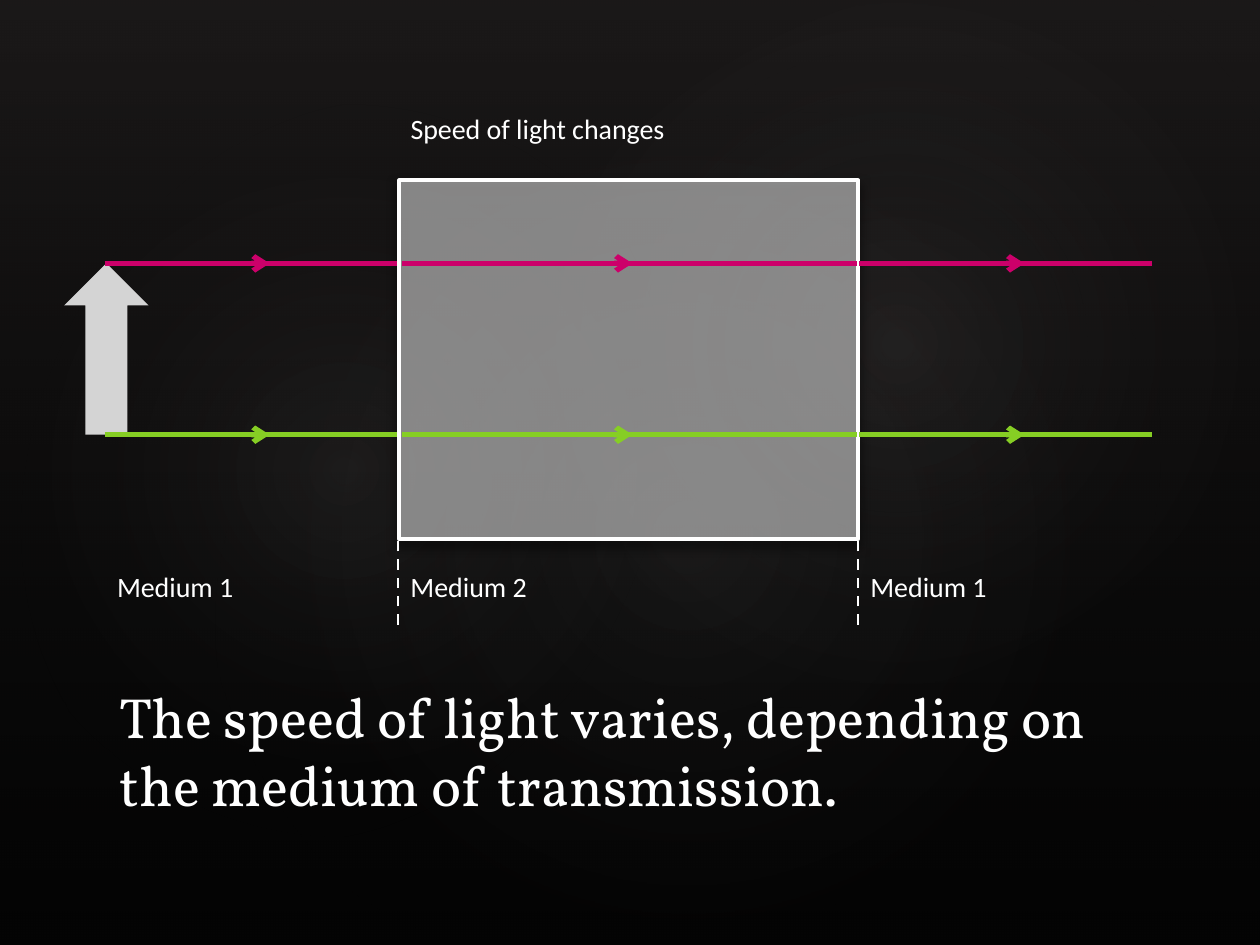
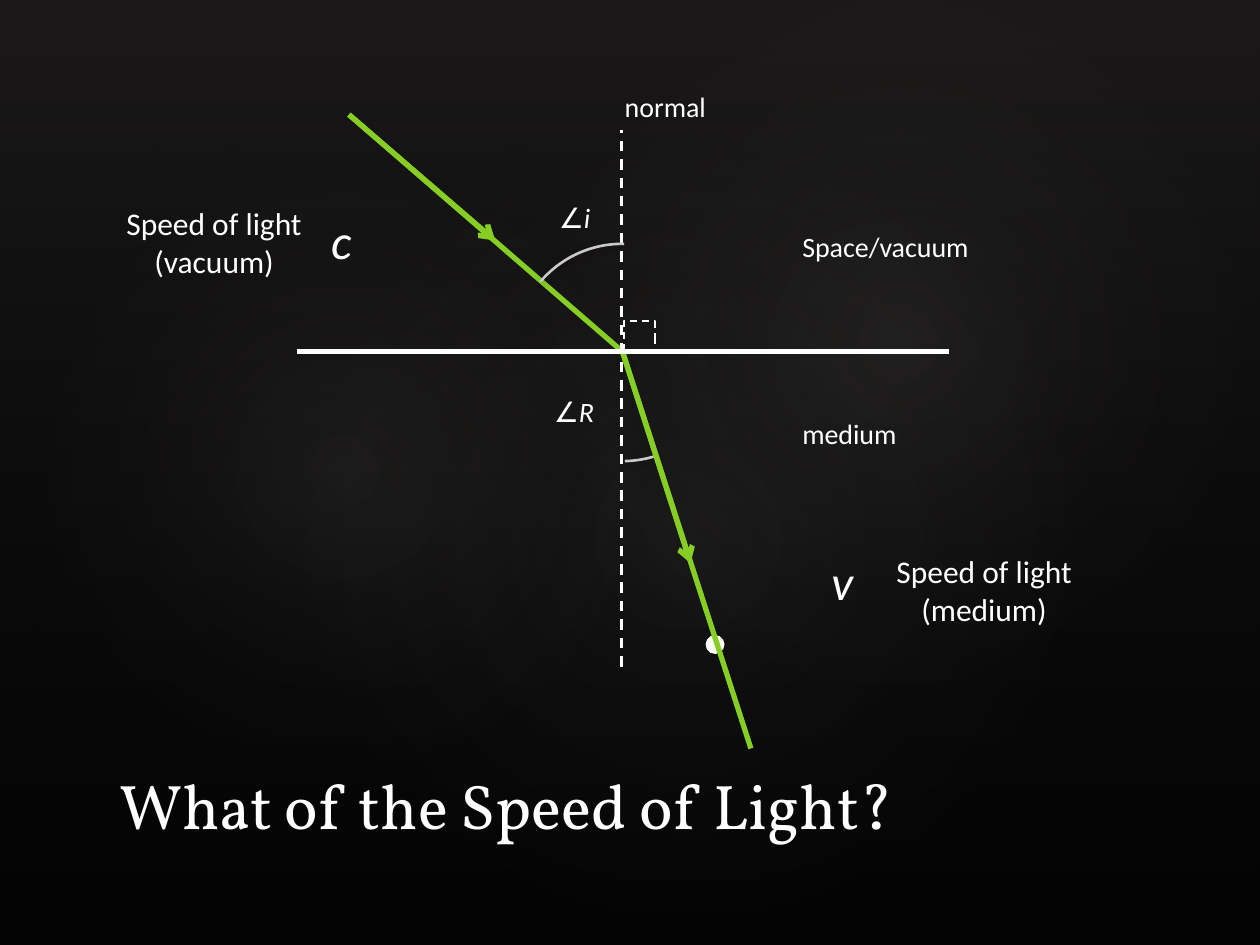
from dataclasses import dataclass

from lxml import etree
from pptx import Presentation
from pptx.dml.color import RGBColor
from pptx.enum.dml import MSO_LINE
from pptx.enum.shapes import MSO_CONNECTOR, MSO_SHAPE
from pptx.enum.text import MSO_ANCHOR, MSO_AUTO_SIZE, PP_ALIGN
from pptx.oxml import parse_xml
from pptx.oxml.ns import qn
from pptx.util import Pt

STRAIGHT = MSO_CONNECTOR.STRAIGHT
RECT, OVAL, ARC, UP_ARROW = (
    MSO_SHAPE.RECTANGLE, MSO_SHAPE.OVAL, MSO_SHAPE.ARC, MSO_SHAPE.UP_ARROW)
DASH = MSO_LINE.DASH
LEFT, CENTER = PP_ALIGN.LEFT, PP_ALIGN.CENTER
BOTTOM = MSO_ANCHOR.BOTTOM
NO_FIT, GROW = MSO_AUTO_SIZE.NONE, MSO_AUTO_SIZE.SHAPE_TO_FIT_TEXT
DRAWING_NS = 'xmlns:a="http://schemas.openxmlformats.org/drawingml/2006/main"'


@dataclass(frozen=True)
class Theme:
    """Colours, fonts and sizes shared by the slides."""
    black: str = "000000"
    white: str = "FFFFFF"
    pink: str = "CC006A"
    green: str = "86CE24"
    object_grey: str = "D4D4D4"
    arc_grey: str = "C9C9C9"
    veil: str = "4B4545"
    glow: str = "BFB9B9"
    dark: str = "282828"
    title_font: str = "Vollkorn"
    body_font: str = "Calibri"
    label: float = 16
    caption: float = 18
    symbol: float = 28
    ray: float = 3
    guide: float = 1.5


THEME = Theme()


@dataclass(frozen=True)
class Box:
    """A region in points that converts its own coordinates to the slide's."""
    left: float
    top: float
    width: float
    height: float

    def point(self, x, y):
        """Return a slide position for a position inside the box."""
        return Pt(self.left + x), Pt(self.top + y)


def apply(target, **formats):
    """Set every given attribute on the target."""
    for attribute, value in formats.items():
        setattr(target, attribute, value)


def stroke(line, color, width, dash=None):
    """Colour a line and set its width and dash."""
    line.color.rgb = RGBColor.from_string(color)
    apply(line, width=Pt(width), dash_style=dash)


def shape(slide, box, kind, x, y, width, height, fill=None, line=None, rotation=0):
    """Add a preset shape with an optional fill and line."""
    part = slide.shapes.add_shape(kind, *box.point(x, y), Pt(width), Pt(height))
    part.shadow.inherit = False
    part.rotation = rotation
    if fill:
        part.fill.solid()
        part.fill.fore_color.rgb = RGBColor.from_string(fill)
    else:
        part.fill.background()
    if line:
        stroke(part.line, *line)
    else:
        part.line.fill.background()
    return part


def drop_shadow(part, alpha, blur, distance):
    """Give a shape a black shadow that falls straight down."""
    effects = part._element.spPr.find(qn("a:effectLst"))
    effects.append(parse_xml(
        f'<a:outerShdw {DRAWING_NS} blurRad="{Pt(blur)}" dist="{Pt(distance)}" '
        f'dir="5400000" rotWithShape="0"><a:srgbClr val="{THEME.black}">'
        f'<a:alpha val="{alpha * 1000}"/></a:srgbClr></a:outerShdw>'))


def segment(slide, box, start, end, color, width, dash=None, arrow=False):
    """Add a straight line, optionally with an open arrowhead at its end."""
    line = slide.shapes.add_connector(STRAIGHT, *box.point(*start), *box.point(*end))
    stroke(line.line, color, width, dash)
    if arrow:
        etree.SubElement(line.line._get_or_add_ln(), qn("a:tailEnd"), type="arrow")
    etree.SubElement(line._element.spPr, qn("a:effectLst"))


def ray(slide, box, start, tip, end, color, resume=None):
    """Add a light ray with an arrowhead part of the way along it."""
    segment(slide, box, resume or start, end, color, THEME.ray)
    segment(slide, box, start, tip, color, THEME.ray, arrow=True)


def write(paragraph, text, font, size, italic=False):
    """Append a formatted white run to a paragraph."""
    run = paragraph.add_run()
    run.text = text
    apply(run.font, name=font, size=Pt(size), italic=italic, bold=False)
    run.font.color.rgb = RGBColor.from_string(THEME.white)


def label(slide, box, x, y, width, runs, size=THEME.label, height=26.6,
          align=LEFT, wrap=False):
    """Add a text box from pairs of text and italic flag."""
    frame = slide.shapes.add_textbox(
        *box.point(x, y), Pt(width), Pt(height)).text_frame
    apply(frame, word_wrap=wrap, auto_size=GROW)
    paragraph = frame.paragraphs[0]
    paragraph.alignment = align
    for text, italic in runs:
        write(paragraph, text, THEME.body_font, size, italic)


def title(slide, box, text, size):
    """Place and format the title placeholder."""
    heading = slide.shapes.title
    left, top = box.point(0, 0)
    apply(heading, left=left, top=top, width=Pt(box.width), height=Pt(box.height))
    apply(heading.text_frame, word_wrap=True, auto_size=NO_FIT, vertical_anchor=BOTTOM)
    paragraph = heading.text_frame.paragraphs[0]
    apply(paragraph, alignment=LEFT, line_spacing=Pt(size * 1.2))
    write(paragraph, text, THEME.title_font, size)


def gradient(part, stops, direction):
    """Fill a shape with a gradient of (position, colour, opacity) stops."""
    colors = "".join(
        f'<a:gs pos="{position * 1000}"><a:srgbClr val="{color}">'
        f'<a:alpha val="{alpha * 1000}"/></a:srgbClr></a:gs>'
        for position, color, alpha in stops)
    properties = part._element.spPr
    properties.replace(properties.find(qn("a:noFill")), parse_xml(
        f'<a:gradFill {DRAWING_NS} rotWithShape="1"><a:gsLst>{colors}</a:gsLst>'
        f'{direction}</a:gradFill>'))


def backdrop(prs, slide, box):
    """Build the dark glowing background and move it to the slide master."""
    master = prs.slide_master
    master.background.fill.solid()
    master.background.fill.fore_color.rgb = RGBColor.from_string(THEME.black)
    veil = shape(slide, box, RECT, 0, 0, box.width, box.height)
    gradient(veil, [(0, THEME.veil, 36), (100, THEME.dark, 10)],
             '<a:lin ang="5400000" scaled="0"/>')
    parts = [veil]
    radial = ('<a:path path="circle"><a:fillToRect l="50000" t="50000" '
              'r="50000" b="50000"/></a:path>')
    for x, y, width, height, rotation, alpha in (
            (108, 82.1, 570.2, 449.3, 328.7, 7),
            (-21.6, 92.2, 436.3, 352.8, 294.3, 8),
            (257.8, 9.4, 510.5, 374.4, 328.7, 8)):
        glow = shape(slide, box, OVAL, x, y, width, height, rotation=rotation)
        gradient(glow, [(0, THEME.glow, alpha), (58, THEME.dark, 0)], radial)
        parts.append(glow)
    for index, part in enumerate(parts, start=2):
        master.shapes._spTree.insert(index, part._element)


def media_diagram(slide, box):
    """Draw two rays crossing a block of a second medium."""
    block = shape(slide, box, RECT, 192.2, 43, 262.1, 205.2,
                  THEME.white, (THEME.white, 2.25))
    color = block._element.spPr.find(qn("a:solidFill"))[0]
    etree.SubElement(color, qn("a:alpha"), val="50000")
    drop_shadow(block, 60, 6, 3)

    top_ray, bottom_ray = 90.5, 188.4
    passages = ((23.8, 118.1, 96.5, 190.8),
                (193.7, 325.4, 273.6, 453.6),
                (455, 549.4, 528.5, 622.1))
    shape(slide, box, UP_ARROW, 0.7, top_ray, 48.2, bottom_ray - top_ray,
          THEME.object_grey)
    for y, color in ((top_ray, THEME.pink), (bottom_ray, THEME.green)):
        for start, tip, resume, end in passages:
            ray(slide, box, (start, y), (tip, y), (end, y), color, (resume, y))

    first, second, third = 23.8, 191.5, 454.3
    for x in (second, third):
        segment(slide, box, (x, 297.1), (x, 248.2), THEME.white, THEME.guide, DASH)
    for x, medium in ((first, "Medium 1"), (second, "Medium 2"), (third, "Medium 1")):
        label(slide, box, x, 261.8, 82.1, [(medium, False)])
    label(slide, box, second, 0.5, 162, [("Speed of light changes", False)])


def refraction_diagram(slide, box):
    """Draw a ray bending at the surface, with its angles and speeds."""
    hit = (303.7, 160.9)
    normal_x, surface_y = 303, hit[1]
    shape(slide, box, RECT, 304.4, 143.6, 18, 18, line=(THEME.white, 1, DASH),
          rotation=270)
    ray(slide, box, (147.4, 25.5), (231, 97.5), hit, THEME.green)
    segment(slide, box, (normal_x, 340.9), (normal_x, 34.2),
            THEME.white, THEME.guide, DASH)
    for radius, start, end, flipped in ((61.6, 186.27, 0.58, False),
                                        (62.6, 0.72, 10.78, True)):
        angle = shape(slide, box, ARC, hit[0] - radius, surface_y - radius,
                      2 * radius, 2 * radius, line=(THEME.arc_grey, THEME.guide),
                      rotation=270)
        angle.adjustments[0], angle.adjustments[1] = start, end
        if flipped:
            angle._element.spPr.xfrm.set("flipH", "1")
        drop_shadow(angle, 32, 5, 1)
    shape(slide, box, OVAL, 351.2, 322.9, 10.8, 10.8, THEME.white)
    ray(slide, box, hit, (342.6, 281.8), (377.1, 387.7), THEME.green)
    segment(slide, box, (117.9, surface_y), (490.2, surface_y), THEME.white, THEME.ray)

    label(slide, box, 399.4, 194.7, 139.7, [("medium", False)], wrap=True)
    label(slide, box, 399.4, 87.4, 110.9, [("Space/vacuum", False)])
    label(slide, box, 297.9, 7.5, 61.2, [("normal", False)])
    for x, y, width, name in ((253.3, 181.8, 45.4, "R"), (257.6, 70.9, 37.4, "i")):
        label(slide, box, x, y, width, [("∠", False), (name, True)], align=CENTER)
    for x, y, symbol in ((130.2, 76.6, "c"), (416, 271.8, "v")):
        label(slide, box, x, y, 33.8, [(symbol, True)], THEME.symbol, 41)
    for x, y, place in ((-0.2, 73, "vacuum"), (439.8, 271.8, "medium")):
        label(slide, box, x, y, 141.1, [(f"Speed of light ({place})", False)],
              THEME.caption, 51.1, CENTER, True)


def main():
    """Build and save the presentation."""
    prs = Presentation()
    page = Box(0, 0, 720, 540)
    apply(prs, slide_width=Pt(page.width), slide_height=Pt(page.height))
    title_only = prs.slide_layouts[5]

    media = prs.slides.add_slide(title_only)
    backdrop(prs, media, page)
    title(media, Box(61.2, 376.6, 594, 94.3),
          "The speed of light varies, depending on the medium of transmission.", 32.4)
    media_diagram(media, Box(36, 60, 623, 300))

    refraction = prs.slides.add_slide(title_only)
    title(refraction, Box(61.2, 434.2, 594, 50.4), "What of the Speed of Light?", 36)
    refraction_diagram(refraction, Box(52, 40, 581, 388))
    prs.save("out.pptx")


if __name__ == "__main__":
    main()
